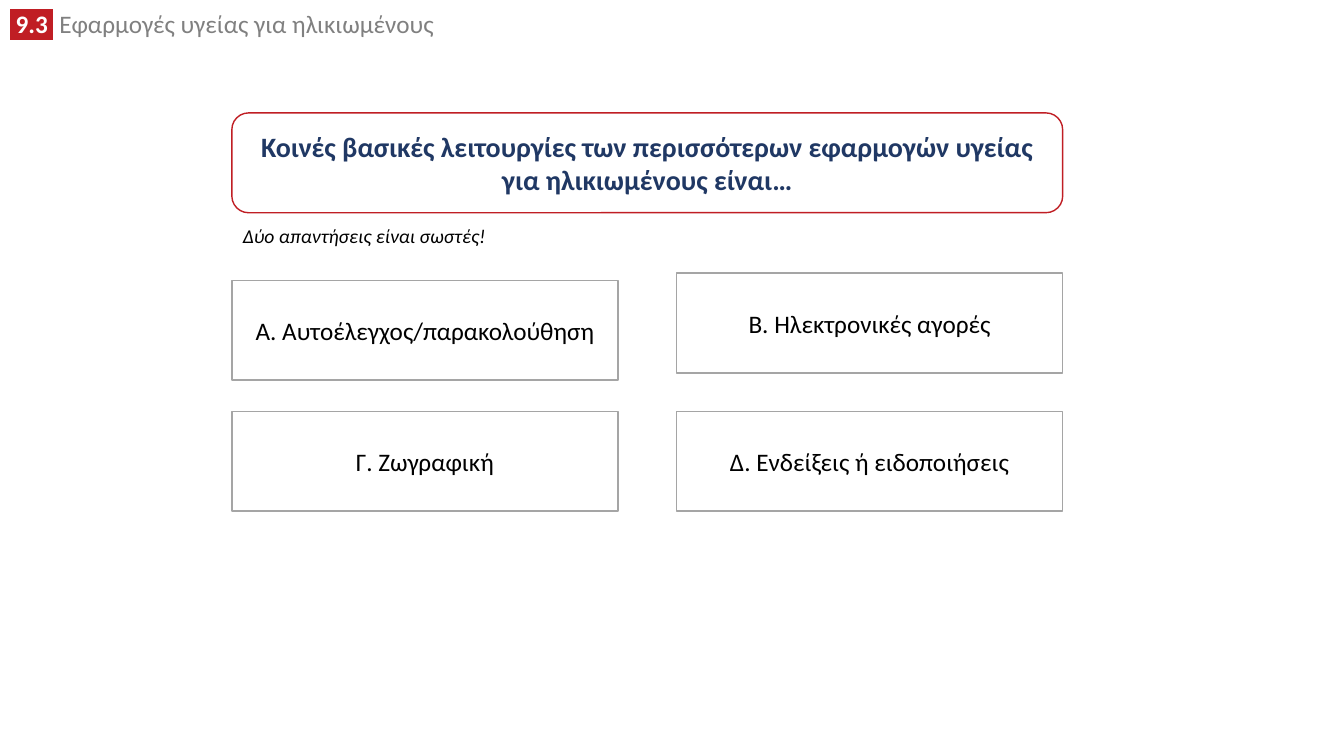
from lxml.etree import SubElement
from pptx import Presentation
from pptx.dml.color import RGBColor
from pptx.enum.shapes import MSO_SHAPE
from pptx.enum.text import MSO_ANCHOR, MSO_AUTO_SIZE, PP_ALIGN
from pptx.oxml.ns import qn
from pptx.util import Inches, Pt

RED, WHITE, BLACK = "C01E24", "FFFFFF", "000000"
GREY, NAVY, EDGE = "808080", "203864", "A5A5A5"


def color(code):
    """Turn a hex string into a colour."""
    return RGBColor.from_string(code)


def style(run, size, code, bold=False, italic=False):
    """Set the font of one run."""
    font = run.font
    font.name, font.size = "Calibri", Pt(size)
    font.bold, font.italic = bold, italic
    font.color.rgb = color(code)


def mark(run, code):
    """Put a highlight behind a run."""
    props = run.font._element
    light = SubElement(props, qn("a:highlight"))
    SubElement(light, qn("a:srgbClr"), val=code)
    props.find(qn("a:solidFill")).addnext(light)


def label(slide, box, wrap):
    """Add a text box that grows with its text."""
    frame = slide.shapes.add_textbox(*map(Inches, box)).text_frame
    frame.word_wrap = wrap
    frame.auto_size = MSO_AUTO_SIZE.SHAPE_TO_FIT_TEXT
    return frame.paragraphs[0]


def panel(slide, kind, box, text, edge, size, code, bold=False):
    """Add an outlined shape with centred text."""
    shape = slide.shapes.add_shape(kind, *map(Inches, box))
    shape.shadow.inherit = False
    shape.fill.solid()
    shape.fill.fore_color.rgb = color(WHITE)
    shape.line.color.rgb = color(edge)
    shape.line.width = Pt(1)
    frame = shape.text_frame
    frame.word_wrap = True
    frame.vertical_anchor = MSO_ANCHOR.MIDDLE
    frame.text = text
    para = frame.paragraphs[0]
    para.alignment = PP_ALIGN.CENTER
    style(para.runs[0], size, code, bold)


def header(slide, box, number, title):
    """Write the section number and title."""
    para = label(slide, box, True)
    para.line_spacing = 0.8
    first, rest = para.add_run(), para.add_run()
    first.text, rest.text = f" {number} ", f" {title}"
    style(first, 18, WHITE, bold=True)
    mark(first, RED)
    style(rest, 18, GREY)


def question(slide, box, text, hint):
    """Place the question with its hint below."""
    left, top, width, height = box
    panel(slide, MSO_SHAPE.ROUNDED_RECTANGLE, box, text, RED, 20, NAVY, True)
    para = label(slide, (left + 0.01, top + height + 0.06, 2.63, 0.34), False)
    para.text = hint
    style(para.runs[0], 14, BLACK, italic=True)


def answers(slide, box, items):
    """Lay out the answers in two columns and two rows."""
    left, top, width, height = box
    wide, high = 3.83, 0.99
    for index, (text, lift) in enumerate(items):
        row, col = divmod(index, 2)
        x = left + col * (width - wide)
        y = top + row * (height - high) - lift
        panel(slide, MSO_SHAPE.RECTANGLE, (x, y, wide, high), text, EDGE, 18, BLACK)


def main():
    """Build and save the quiz slide."""
    deck = Presentation()
    deck.slide_width, deck.slide_height = Inches(13.33), Inches(7.5)
    slide = deck.slides.add_slide(deck.slide_layouts[6])
    header(slide, (0, 0.09, 9.52, 0.35), "9.3", "Εφαρμογές υγείας για ηλικιωμένους")
    question(
        slide,
        (2.3, 1.12, 8.24, 0.99),
        "Κοινές βασικές λειτουργίες των περισσότερων εφαρμογών υγείας για ηλικιωμένους είναι…",
        "Δύο απαντήσεις είναι σωστές!",
    )
    answers(
        slide,
        (2.3, 2.78, 8.24, 2.29),
        [
            ("A. Αυτοέλεγχος/παρακολούθηση", 0),
            ("B. Ηλεκτρονικές αγορές", 0.07),
            ("Γ. Ζωγραφική", 0),
            ("Δ. Ενδείξεις ή ειδοποιήσεις", 0),
        ],
    )
    deck.save("out.pptx")


if __name__ == "__main__":
    main()
